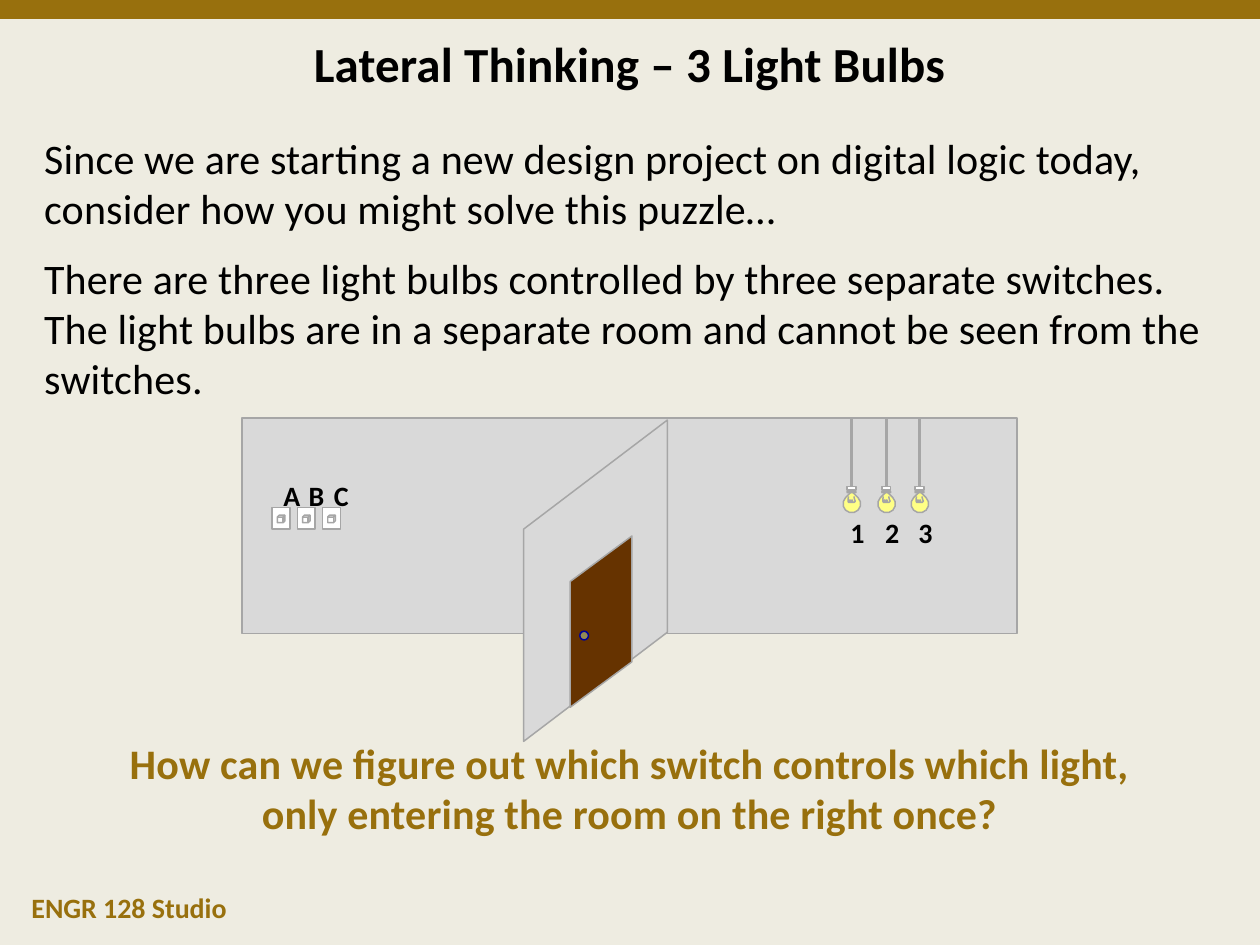
from lxml.etree import SubElement
from pptx import Presentation
from pptx.dml.color import RGBColor
from pptx.enum.shapes import MSO_SHAPE
from pptx.enum.text import MSO_ANCHOR, MSO_AUTO_SIZE, PP_ALIGN
from pptx.oxml.ns import qn
from pptx.util import Pt

BLACK, WHITE, GOLD = "000000", "FFFFFF", "98700D"
CREAM, WALL, OUTLINE = "EEECE1", "D9D9D9", "A6A6A6"

# Outline of the filament in steps of FILAMENT_STEP
FILAMENT_STEP = Pt(0.07)
FILAMENT = [
    (3, 0), (3, 10), (0, 20), (0, 40), (5, 50), (15, 50), (20, 45), (20, 33),
    (15, 30), (13, 40), (20, 50), (30, 50), (37, 45), (37, 40), (33, 30),
    (30, 40), (35, 50), (50, 50), (60, 40), (55, 30), (50, 10), (50, 0),
]


def color(value):
    return RGBColor.from_string(value)


def style_shape(shape, fill, line=OUTLINE):
    shape.shadow.inherit = False
    if fill:
        shape.fill.solid()
        shape.fill.fore_color.rgb = color(fill)
    else:
        shape.fill.background()
    if line:
        shape.line.color.rgb = color(line)
        shape.line.width = Pt(0.85)
    else:
        shape.line.fill.background()


def add_box(shapes, kind, left, top, width, height, fill, line=OUTLINE):
    shape = shapes.add_shape(kind, Pt(left), Pt(top), Pt(width), Pt(height))
    style_shape(shape, fill, line)
    return shape


def add_slanted(shapes, left, top, width, height, slant, fill, flip):
    """Add an upright panel seen at an angle: a parallelogram on its side."""
    shape = add_box(shapes, MSO_SHAPE.PARALLELOGRAM, left, top, width, height, fill)
    shape.adjustments[0] = slant
    shape.rotation = 270
    shape._element.spPr.find(qn("a:xfrm")).set(flip, "1")


def add_run(paragraph, text, size, fill=BLACK, bold=False, spacing=None):
    run = paragraph.add_run()
    run.text = text
    run.font.name = "Calibri"
    run.font.size = Pt(size)
    run.font.bold = bold
    run.font.color.rgb = color(fill)
    if spacing:
        run._r.get_or_add_rPr().set("spc", str(spacing))


def place(shape, left, top, width, height):
    shape.left, shape.top = Pt(left), Pt(top)
    shape.width, shape.height = Pt(width), Pt(height)
    shape.text_frame.word_wrap = True
    shape.text_frame.auto_size = MSO_AUTO_SIZE.NONE


def fill_title(title, left, top, width, height):
    place(title, left, top, width, height)
    frame = title.text_frame
    frame.margin_top = frame.margin_bottom = 0
    frame.vertical_anchor = MSO_ANCHOR.MIDDLE
    paragraph = frame.paragraphs[0]
    paragraph.alignment = PP_ALIGN.CENTER
    add_run(paragraph, "Lateral Thinking – 3 Light Bulbs", 28, bold=True, spacing=10)


def fill_body(body, left, top, width, height):
    place(body, left, top, width, height)
    frame = body.text_frame
    room_gap = 185
    blocks = [
        (["Since we are starting a new design project on digital logic today, "
          "consider how you might solve this puzzle…"], 4.8, PP_ALIGN.LEFT, BLACK, False),
        (["There are three light bulbs controlled by three separate switches.",
          "The light bulbs are in a separate room and cannot be seen from the switches."],
         4.8, PP_ALIGN.LEFT, BLACK, False),
        (["How can we figure out which switch controls which light,",
          "only entering the room on the right once?"],
         room_gap, PP_ALIGN.CENTER, GOLD, True),
    ]
    for index, (lines, before, alignment, fill, bold) in enumerate(blocks):
        paragraph = frame.add_paragraph() if index else frame.paragraphs[0]
        paragraph.alignment = alignment
        paragraph.space_before, paragraph.space_after = Pt(before), Pt(6)
        properties = paragraph._p.get_or_add_pPr()
        properties.set("marL", "0")
        properties.set("indent", "0")
        SubElement(properties, qn("a:buNone"))
        for number, line in enumerate(lines):
            if number:
                paragraph.add_line_break()
            add_run(paragraph, line, 24, fill, bold, spacing=10)


def add_footer(shapes, left, top, width, height):
    footer = shapes.add_textbox(0, 0, 0, 0)
    place(footer, left, top, width, height)
    footer.text_frame.margin_left = 0
    footer.text_frame.vertical_anchor = MSO_ANCHOR.MIDDLE
    add_run(footer.text_frame.paragraphs[0], "ENGR 128 Studio", 16, GOLD, True)


def add_label(shapes, text, left, top):
    label = shapes.add_textbox(0, 0, 0, 0)
    place(label, left, top, 14.4, 26.6)
    paragraph = label.text_frame.paragraphs[0]
    paragraph.alignment = PP_ALIGN.CENTER
    add_run(paragraph, text, 16, bold=True)


def add_switch(shapes, left, top):
    add_box(shapes, MSO_SHAPE.RECTANGLE, left, top, 10.1, 12.2, WHITE)
    add_box(shapes, MSO_SHAPE.CUBE, left + 2.9, top + 4.3, 4.3, 4.3, WHITE)


def add_bulb(shapes, left, top):
    """Hang a bulb on its cord from the ceiling at top."""
    add_box(shapes, MSO_SHAPE.RECTANGLE, left + 4.6, top, 0.7, 39.6, WHITE)
    glass = add_box(shapes, MSO_SHAPE.TEAR, left, top + 43.9, 10.1, 10.1, "FFFF85")
    glass.rotation = 315
    add_box(shapes, MSO_SHAPE.ROUNDED_RECTANGLE, left + 2.4, top + 41.8, 5, 0.7, "808080")
    add_box(shapes, MSO_SHAPE.RECTANGLE, left + 2.4, top + 38.9, 5, 2.2, WHITE)
    builder = shapes.build_freeform(*FILAMENT[0], scale=FILAMENT_STEP)
    builder.add_line_segments(FILAMENT[1:], close=False)
    filament = builder.convert_to_shape(Pt(left + 2.9), Pt(top + 44.6))
    style_shape(filament, None)


def add_room(shapes, left, top, width, height):
    add_box(shapes, MSO_SHAPE.RECTANGLE, left, top, width, height, WALL)
    add_slanted(shapes, left + 110.2, top + 51.8, 183.6, 82.1, 0.759, WALL, "flipH")
    add_slanted(shapes, left + 156.2, top + 98.6, 97.9, 35.3, 0.737, "663300", "flipV")
    add_box(shapes, MSO_SHAPE.OVAL, left + 193, top + 121.7, 5, 5, "948A54", "000097")

    for index, name in enumerate("ABC"):
        switch_left = left + 17.3 + index * 14.4
        add_switch(shapes, switch_left, top + 51.1)
        add_label(shapes, name, switch_left - 0.7, top + 31)

    for name, offset in zip("123", (0, 19.9, 38.9)):
        bulb_left = left + 343.4 + offset
        add_bulb(shapes, bulb_left, top)
        add_label(shapes, name, bulb_left - 2.9, top + 51.8)


def main():
    presentation = Presentation()
    presentation.slide_width, presentation.slide_height = Pt(720), Pt(540)
    slide = presentation.slides.add_slide(presentation.slide_layouts[1])
    slide.background.fill.solid()
    slide.background.fill.fore_color.rgb = color(CREAM)

    add_box(slide.shapes, MSO_SHAPE.RECTANGLE, 0, 0, 720, 10.8, GOLD, None)
    fill_title(slide.shapes.title, 18, 18, 684, 36)
    fill_body(slide.placeholders[1], 18, 72, 684, 432)
    add_footer(slide.shapes, 18, 504, 230.4, 28.8)
    room = slide.shapes.add_group_shape()
    add_room(room.shapes, 138.3, 239, 442.8, 123)
    presentation.save("out.pptx")


if __name__ == "__main__":
    main()
